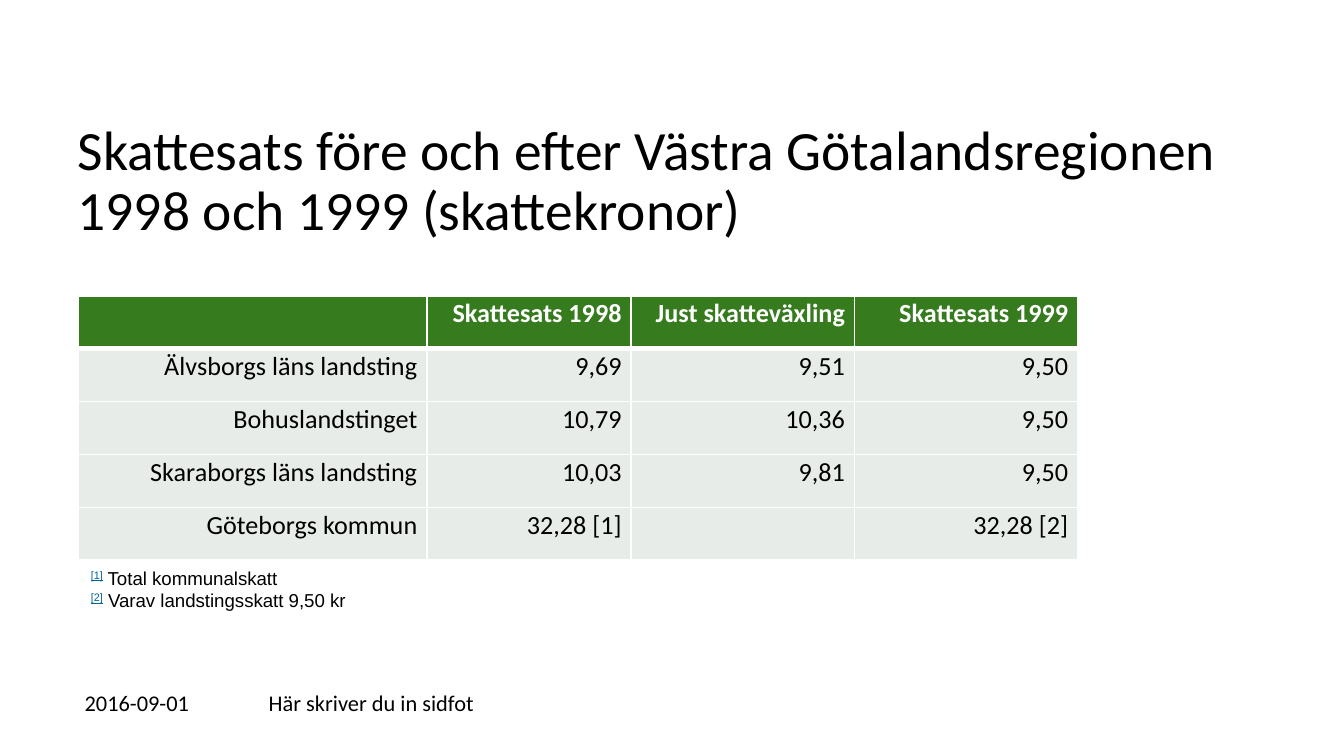
import pptx
import pptx.dml.color
import pptx.enum.text
import pptx.oxml
import pptx.oxml.ns
import pptx.util

Cm = pptx.util.Cm
Pt = pptx.util.Pt
ALIGN = pptx.enum.text.PP_ALIGN
ANCHOR = pptx.enum.text.MSO_ANCHOR

COLORS = {
    "text": "000000",
    "white": "FFFFFF",
    "header": "367B1E",
    "body": "E8ECE8",
    "note": "006298",
}
LEFT = 1.47
COLUMNS = [6.6, 3.86, 4.22, 4.22]
ROW_HEIGHT = 1
ROWS = [
    ["", "Skattesats 1998", "Just skatteväxling", "Skattesats 1999"],
    ["Älvsborgs läns landsting", "9,69", "9,51", "9,50"],
    ["Bohuslandstinget", "10,79", "10,36", "9,50"],
    ["Skaraborgs läns landsting", "10,03", "9,81", "9,50"],
    ["Göteborgs kommun", "32,28 [1]", "", "32,28 [2]"],
]
NOTES = [("[1]", " Total kommunalskatt"), ("[2]", " Varav landstingsskatt 9,50 kr")]


def rgb(name):
    return pptx.dml.color.RGBColor.from_string(COLORS[name])


def write(p, text, size=12, font="Calibri", color="text", bold=False,
          underline=False, raised=False):
    r = p.add_run()
    r.text = text
    r.font.size = Pt(size)
    r.font.name = font
    r.font.color.rgb = rgb(color)
    r.font.bold = bold
    r.font.underline = underline
    if raised:
        r.font._element.set("baseline", "30000")


class Deck:
    """Holds the style and the current slide, and draws each kind of element."""

    def __init__(self, width, height):
        self.prs = pptx.Presentation()
        self.prs.slide_width = Cm(width)
        self.prs.slide_height = Cm(height)
        self.s = self.prs.slides.add_slide(self.prs.slide_layouts[6])

    def box(self, left, top, width, height, inset=True):
        sp = self.s.shapes.add_textbox(Cm(left), Cm(top), Cm(width), Cm(height))
        tf = sp.text_frame
        tf.word_wrap = True
        tf.vertical_anchor = ANCHOR.MIDDLE
        if not inset:
            tf.margin_left = tf.margin_right = tf.margin_top = tf.margin_bottom = 0
        return tf

    def title(self, text, left, top, width, height):
        p = self.box(left, top, width, height, inset=False).paragraphs[0]
        p.line_spacing = 0.9
        write(p, text, size=29.7)

    def footer(self, text, left, width):
        write(self.box(left, 12.9, width, 0.76).paragraphs[0], text)

    def notes(self, notes, left, top, width, height):
        tf = self.box(left, top, width, height)
        for i, (mark, text) in enumerate(notes):
            p = tf.add_paragraph() if i else tf.paragraphs[0]
            write(p, mark, size=10, font="Arial", color="note", underline=True, raised=True)
            write(p, text, size=10, font="Arial")

    def border(self, cell, side, width):
        ns = pptx.oxml.ns.nsdecls("a")
        cell._tc.get_or_add_tcPr().append(pptx.oxml.parse_xml(
            f'<a:ln{side} {ns} w="{Pt(width)}"><a:solidFill>'
            f'<a:srgbClr val="{COLORS["white"]}"/></a:solidFill></a:ln{side}>'))

    def cell(self, cell, text, row):
        header = row == 0
        cell.margin_left = cell.margin_right = Cm(0.18)
        cell.margin_top = cell.margin_bottom = 0
        widths = {"L": 1, "R": 1, "T": 3 if row == 1 else 1, "B": 3 if header else 1}
        for side, width in widths.items():
            self.border(cell, side, width)
        cell.fill.solid()
        cell.fill.fore_color.rgb = rgb("header" if header else "body")
        if text:
            p = cell.text_frame.paragraphs[0]
            p.alignment = ALIGN.RIGHT
            p.line_spacing = 1.07
            write(p, text, size=14, color="white" if header else "text", bold=header)

    def table(self, rows, columns, left, top):
        table = self.s.shapes.add_table(
            len(rows), len(columns), Cm(left), Cm(top),
            Cm(sum(columns)), Cm(ROW_HEIGHT * len(rows))).table
        for column, width in zip(table.columns, columns):
            column.width = Cm(width)
        for i, row in enumerate(rows):
            for j, text in enumerate(row):
                self.cell(table.cell(i, j), text, i)


def main():
    deck = Deck(25.4, 14.29)
    deck.title("Skattesats före och efter Västra Götalandsregionen 1998 och 1999 (skattekronor)",
               LEFT, 2.01, 22.43, 2.87)
    deck.footer("2016-09-01", 1.35, 3.4)
    deck.footer("Här skriver du in sidfot", 4.83, 12.4)
    deck.table(ROWS, COLUMNS, LEFT, 5.59)
    deck.notes(NOTES, LEFT, 10.57, 15.77, 1.12)
    deck.prs.save("out.pptx")


if __name__ == "__main__":
    main()
